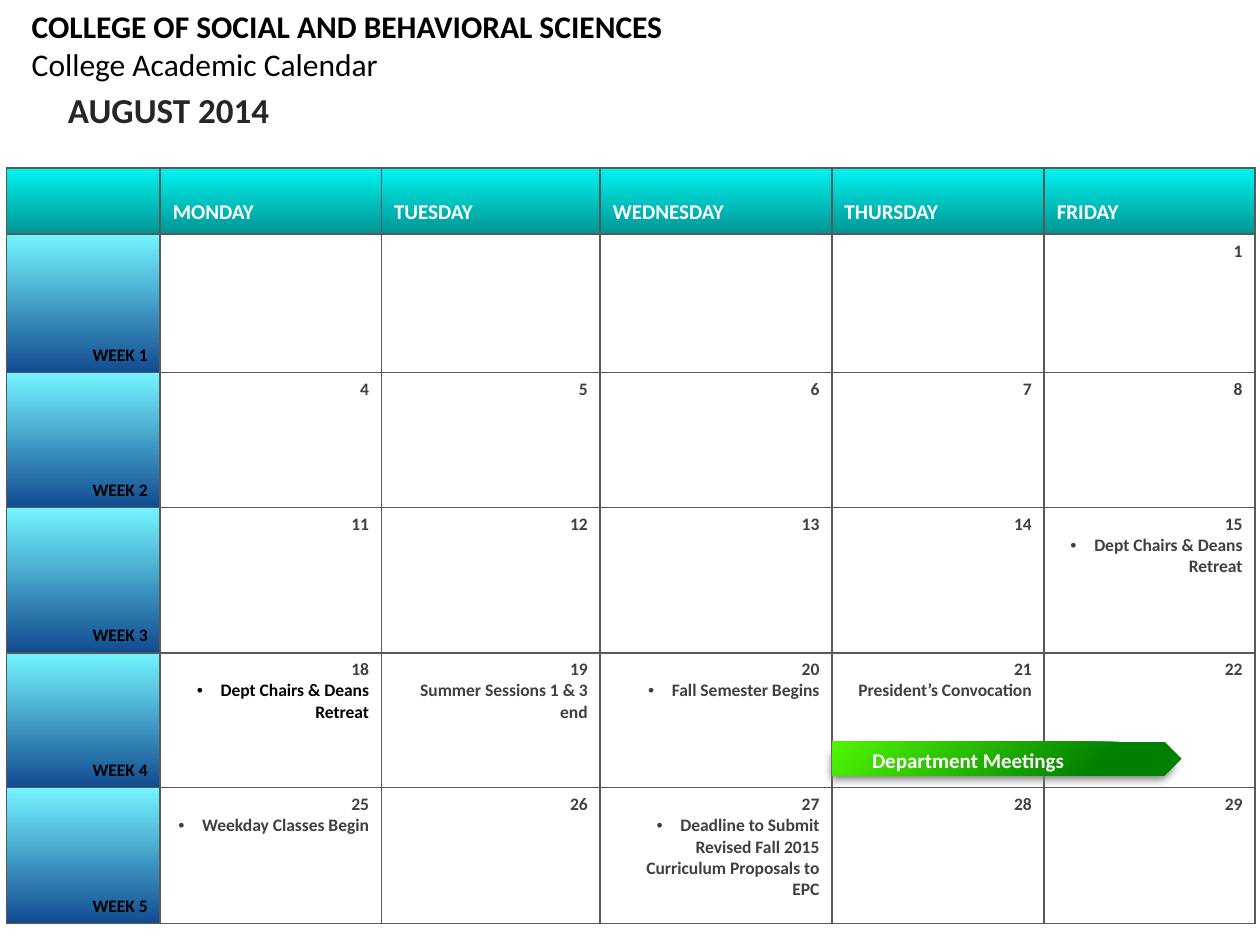
from lxml.etree import SubElement
from pptx import Presentation
from pptx.dml.color import RGBColor
from pptx.enum.shapes import MSO_SHAPE
from pptx.enum.text import MSO_ANCHOR, MSO_AUTO_SIZE, PP_ALIGN
from pptx.oxml.ns import qn
from pptx.util import Cm, Pt

HEADING = ["COLLEGE OF SOCIAL AND BEHAVIORAL SCIENCES", "College Academic Calendar"]
MONTH = "AUGUST 2014"
BANNER = "Department Meetings"
WEEKDAYS = ["MONDAY", "TUESDAY", "WEDNESDAY", "THURSDAY", "FRIDAY"]
FIRST_MONDAY = -3  # makes Friday of week 1 the first of the month
EVENTS = {  # day: (text, has bullet)
    15: ("Dept Chairs & Deans Retreat", True),
    18: ("Dept Chairs & Deans Retreat", True),
    19: ("Summer Sessions 1 & 3 end", False),
    20: ("Fall Semester Begins", True),
    21: ("President’s Convocation", False),
    25: ("Weekday Classes Begin", True),
    27: ("Deadline to Submit Revised Fall 2015 Curriculum Proposals to EPC", True),
}
HIGHLIGHTED_DAY = 18

COLUMN_WIDTHS = [3.1, 4.46, 4.41, 4.67, 4.28, 4.25]
ROW_HEIGHTS = [1.33, 2.79, 2.72, 2.93, 2.72, 2.74]
TABLE_LEFT, TABLE_TOP = 0.13, 3.39

THEME = {
    "font": "Calibri",
    "black": "000000", "white": "FFFFFF", "month": "262626", "day": "404040",
    "border": "595959", "shadow": "808080",
    "header": ("00F3F0", "009593"), "week": ("74F4FF", "124B90"),
    "banner": ("008000", "4FF600"),
    "month_size": 20, "heading_size": 18, "label_size": 12, "day_size": 10,
}


def write(frame, text, color="black", size="day_size", bold=True,
          align=PP_ALIGN.LEFT, bullet=False, first=True):
    """Fill the first paragraph of a frame, or add another one."""
    paragraph = frame.paragraphs[0] if first else frame.add_paragraph()
    paragraph.alignment = align
    if bullet:
        properties = paragraph._p.get_or_add_pPr()
        properties.set("marL", str(Cm(0.48)))
        properties.set("indent", str(-Cm(0.48)))
        SubElement(properties, qn("a:buFont"), typeface="Arial")
        SubElement(properties, qn("a:buChar"), char="•")
    run = paragraph.add_run()
    run.text = text
    run.font.name = THEME["font"]
    run.font.size = Pt(THEME[size])
    run.font.bold = bold
    run.font.color.rgb = RGBColor.from_string(THEME[color])


def fill_solid(fill, color):
    fill.solid()
    fill.fore_color.rgb = RGBColor.from_string(THEME[color])


def fill_gradient(fill, colors, angle=270, start=0):
    fill.gradient()
    fill.gradient_angle = angle
    for stop, color, position in zip(fill.gradient_stops, THEME[colors], (start, 1)):
        stop.color.rgb = RGBColor.from_string(color)
        stop.position = position


def add_borders(cell):
    properties = cell._tc.get_or_add_tcPr()
    for side in ("lnL", "lnR", "lnT", "lnB"):
        line = SubElement(properties, qn(f"a:{side}"), w=str(Pt(1)))
        solid = SubElement(line, qn("a:solidFill"))
        SubElement(solid, qn("a:srgbClr"), val=THEME["border"])


def add_heading(slide):
    title = slide.shapes.title
    title.left, title.top, title.width, title.height = Cm(0.64), Cm(0.1), Cm(12.75), Cm(1.6)
    frame = title.text_frame
    frame.auto_size = MSO_AUTO_SIZE.NONE
    frame.word_wrap = False
    frame.vertical_anchor = MSO_ANCHOR.MIDDLE
    frame.margin_left = frame.margin_right = 0
    for index, line in enumerate(HEADING):
        write(frame, line, size="heading_size", bold=index == 0, first=index == 0)

    month = slide.shapes.add_textbox(Cm(1.12), Cm(1.65), Cm(4.6), Cm(1.11))
    month.text_frame.word_wrap = False
    write(month.text_frame, MONTH, color="month", size="month_size")


def fill_day(cell, day):
    fill_solid(cell.fill, "white")
    if day < 1:
        return
    frame = cell.text_frame
    write(frame, str(day), color="day", align=PP_ALIGN.RIGHT)
    if day in EVENTS:
        text, bullet = EVENTS[day]
        color = "black" if day == HIGHLIGHTED_DAY else "day"
        write(frame, text, color=color, align=PP_ALIGN.RIGHT, bullet=bullet, first=False)


def add_calendar(slide):
    table = slide.shapes.add_table(
        len(ROW_HEIGHTS), len(COLUMN_WIDTHS), Cm(TABLE_LEFT), Cm(TABLE_TOP),
        Cm(sum(COLUMN_WIDTHS)), Cm(sum(ROW_HEIGHTS))).table
    table.first_row = table.horz_banding = False
    for column, width in zip(table.columns, COLUMN_WIDTHS):
        column.width = Cm(width)
    for row, height in zip(table.rows, ROW_HEIGHTS):
        row.height = Cm(height)

    for week, row in enumerate(table.rows):
        for weekday, cell in enumerate(row.cells):
            add_borders(cell)
            if week == 0:
                fill_gradient(cell.fill, "header")
                cell.vertical_anchor = MSO_ANCHOR.BOTTOM
                cell.margin_bottom = Cm(0.18)
                if weekday:
                    write(cell.text_frame, WEEKDAYS[weekday - 1], color="white", size="label_size")
            elif weekday == 0:
                fill_gradient(cell.fill, "week")
                cell.vertical_anchor = MSO_ANCHOR.BOTTOM
                write(cell.text_frame, f"WEEK {week}", align=PP_ALIGN.RIGHT)
            else:
                fill_day(cell, FIRST_MONDAY + 7 * (week - 1) + weekday - 1)


def add_banner(slide):
    group = slide.shapes.add_group_shape()

    def add_pentagon(*box):
        pentagon = group.shapes.add_shape(MSO_SHAPE.PENTAGON, *map(Cm, box))
        pentagon.shadow.inherit = False
        pentagon.line.fill.background()
        return pentagon

    shadow = add_pentagon(16.61, 15.04, 7.42, 0.84)
    fill_solid(shadow.fill, "shadow")
    effects = shadow._element.spPr.find(qn("a:effectLst"))
    SubElement(effects, qn("a:softEdge"), rad=str(Pt(5)))

    arrow = add_pentagon(16.78, 14.95, 7.04, 0.69)
    fill_gradient(arrow.fill, "banner", angle=135, start=0.24)

    label = group.shapes.add_textbox(Cm(17.33), Cm(14.95), Cm(5.66), Cm(0.77))
    label.text_frame.word_wrap = True
    write(label.text_frame, BANNER, color="white", size="label_size")


def main():
    presentation = Presentation()
    presentation.slide_width, presentation.slide_height = Cm(25.4), Cm(19.05)
    slide = presentation.slides.add_slide(presentation.slide_layouts[5])
    add_heading(slide)
    add_calendar(slide)
    add_banner(slide)
    presentation.save("out.pptx")


if __name__ == "__main__":
    main()
